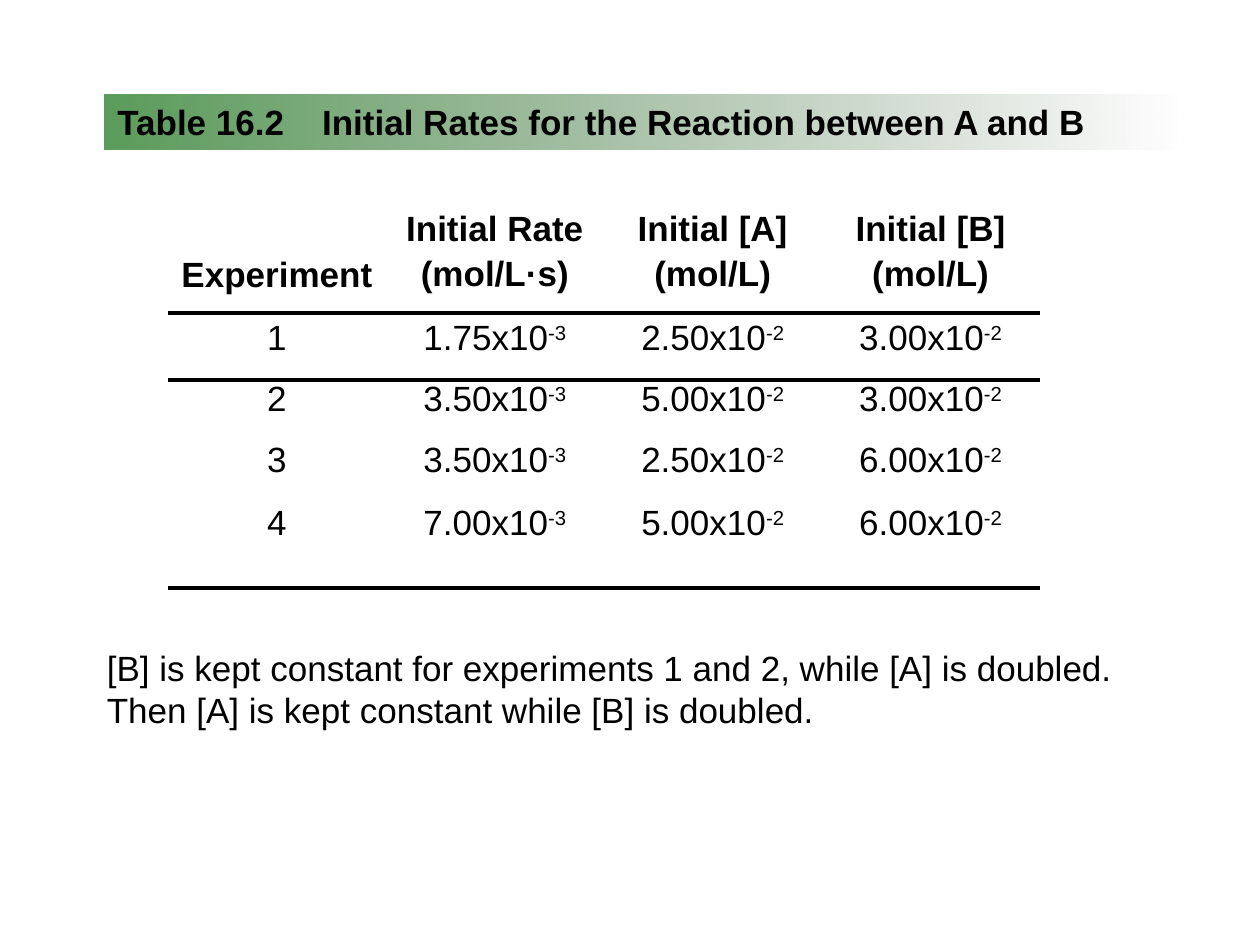
from lxml import etree
from pptx import Presentation
from pptx.dml.color import RGBColor
from pptx.enum.shapes import MSO_SHAPE
from pptx.enum.text import MSO_ANCHOR, PP_ALIGN
from pptx.oxml.ns import qn
from pptx.util import Inches, Pt

BLACK = RGBColor(0x00, 0x00, 0x00)
GREEN = RGBColor(0x00, 0x66, 0x00)
DARK = RGBColor(0x00, 0x2F, 0x00)
RECT = MSO_SHAPE.RECTANGLE
TOP, MIDDLE = MSO_ANCHOR.TOP, MSO_ANCHOR.MIDDLE
LEFT, CENTER = PP_ALIGN.LEFT, PP_ALIGN.CENTER
PLAIN = "{2D5ABB26-0587-4C30-8999-92F81FD0307C}"
COLS, ROWS = 120, 90

HEADS = ["Experiment", "Initial Rate\n(mol/L·s)", "Initial [A]\n(mol/L)", "Initial [B]\n(mol/L)"]
RATES = [
    ("1.75", "2.50", "3.00"),
    ("3.50", "5.00", "3.00"),
    ("3.50", "2.50", "6.00"),
    ("7.00", "5.00", "6.00"),
]
POWERS = ("-3", "-2", "-2")
HEIGHTS = [9.8, 6.4, 5.8, 6, 8]


def adjust(item, values):
    for name, value in values.items():
        setattr(item, name, value)


class Board:
    font = {"name": "Arial", "size": Pt(20), "bold": False}

    def __init__(self, deck):
        self.wide, self.high = deck.slide_width, deck.slide_height
        self.slide = deck.slides.add_slide(deck.slide_layouts[6])

    def across(self, cols):
        return round(self.wide * cols / COLS)

    def down(self, rows):
        return round(self.high * rows / ROWS)

    def place(self, left, top, width, height):
        return self.across(left), self.down(top), self.across(width), self.down(height)

    def words(self, para, text, bold=False, power=""):
        for part, base in ((text, 0), (power, 30000)):
            if part:
                run = para.add_run()
                run.text = part
                adjust(run.font, {**self.font, "bold": bold})
                run.font.color.rgb = BLACK
                if base:
                    run.font._element.set("baseline", str(base))

    def banner(self, area, label, title, indent):
        bar = self.slide.shapes.add_shape(RECT, *self.place(*area))
        bar.shadow.inherit = False
        bar.line.fill.background()
        bar.fill.gradient()
        bar.fill.gradient_angle = 0
        for stop, color in zip(bar.fill.gradient_stops, (GREEN, DARK)):
            stop.color.rgb = color
        tones = list(bar._element.spPr.iter(qn("a:srgbClr")))
        for tone, alpha in zip(tones, (65000, 0)):
            etree.SubElement(tone, qn("a:alpha"), val=str(alpha))
        adjust(bar.text_frame, {"word_wrap": True, "vertical_anchor": MIDDLE})
        para = bar.text_frame.paragraphs[0]
        para.alignment = LEFT
        props = para._p.get_or_add_pPr()
        offset = str(self.across(indent))
        props.set("marL", offset)
        props.set("indent", "-" + offset)
        tabs = etree.SubElement(props, qn("a:tabLst"))
        etree.SubElement(tabs, qn("a:tab"), pos=offset, algn="l")
        self.words(para, f"{label}\t{title}", bold=True)

    def note(self, area, text):
        box = self.slide.shapes.add_textbox(*self.place(*area))
        adjust(box.text_frame, {"word_wrap": True, "vertical_anchor": TOP})
        self.words(box.text_frame.paragraphs[0], text)

    def rule(self, cell, side):
        line = etree.Element(qn("a:" + side), w=str(Pt(2.25)))
        fill = etree.SubElement(line, qn("a:solidFill"))
        etree.SubElement(fill, qn("a:srgbClr"), val=str(BLACK))
        cell._tc.get_or_add_tcPr().insert(0, line)

    def cell(self, cell, text, power="", bold=False, inset=0):
        adjust(cell, {
            "margin_left": Inches(0.1), "margin_right": Inches(0.1),
            "margin_top": self.down(inset), "margin_bottom": 0,
            "vertical_anchor": TOP,
        })
        cell.fill.background()
        for index, line in enumerate(text.split("\n")):
            para = cell.text_frame.add_paragraph() if index else cell.text_frame.paragraphs[0]
            para.alignment = CENTER
            if index:
                para.space_before = Pt(3.4)
            self.words(para, line, bold, power)

    def table(self, left, top, width):
        area = self.place(left, top, width, sum(HEIGHTS))
        frame = self.slide.shapes.add_table(len(HEIGHTS), len(HEADS), *area)
        grid = frame.table
        adjust(grid, {"first_row": False, "horz_banding": False})
        grid._tbl.tblPr.find(qn("a:tableStyleId")).text = PLAIN
        for col in grid.columns:
            col.width = self.across(width / len(HEADS))
        for row, height in zip(grid.rows, HEIGHTS):
            row.height = self.down(height)
        for col, head in enumerate(HEADS):
            inset = 0 if "\n" in head else 4.4
            self.cell(grid.cell(0, col), head, bold=True, inset=inset)
            self.rule(grid.cell(0, col), "lnB")
        for row, rates in enumerate(RATES, 1):
            inset = 0.6 if row == 1 else 0
            self.cell(grid.cell(row, 0), str(row), inset=inset)
            for col, (rate, power) in enumerate(zip(rates, POWERS), 1):
                self.cell(grid.cell(row, col), f"{rate}x10", power, inset=inset)
        for col in range(len(HEADS)):
            self.rule(grid.cell(1, col), "lnT")
            self.rule(grid.cell(len(RATES), col), "lnB")


def main():
    deck = Presentation()
    adjust(deck, {"slide_width": Inches(10), "slide_height": Inches(7.5)})
    board = Board(deck)
    board.banner((10, 9, 103, 5.2), "Table 16.2",
                 "Initial Rates for the Reaction between A and B", 19.5)
    board.table(16, 20, 83)
    board.note((9, 61, 101, 9.2),
               "[B] is kept constant for experiments 1 and 2, while [A] is doubled. "
               "Then [A] is kept constant while [B] is doubled.")
    deck.save("out.pptx")


if __name__ == "__main__":
    main()
